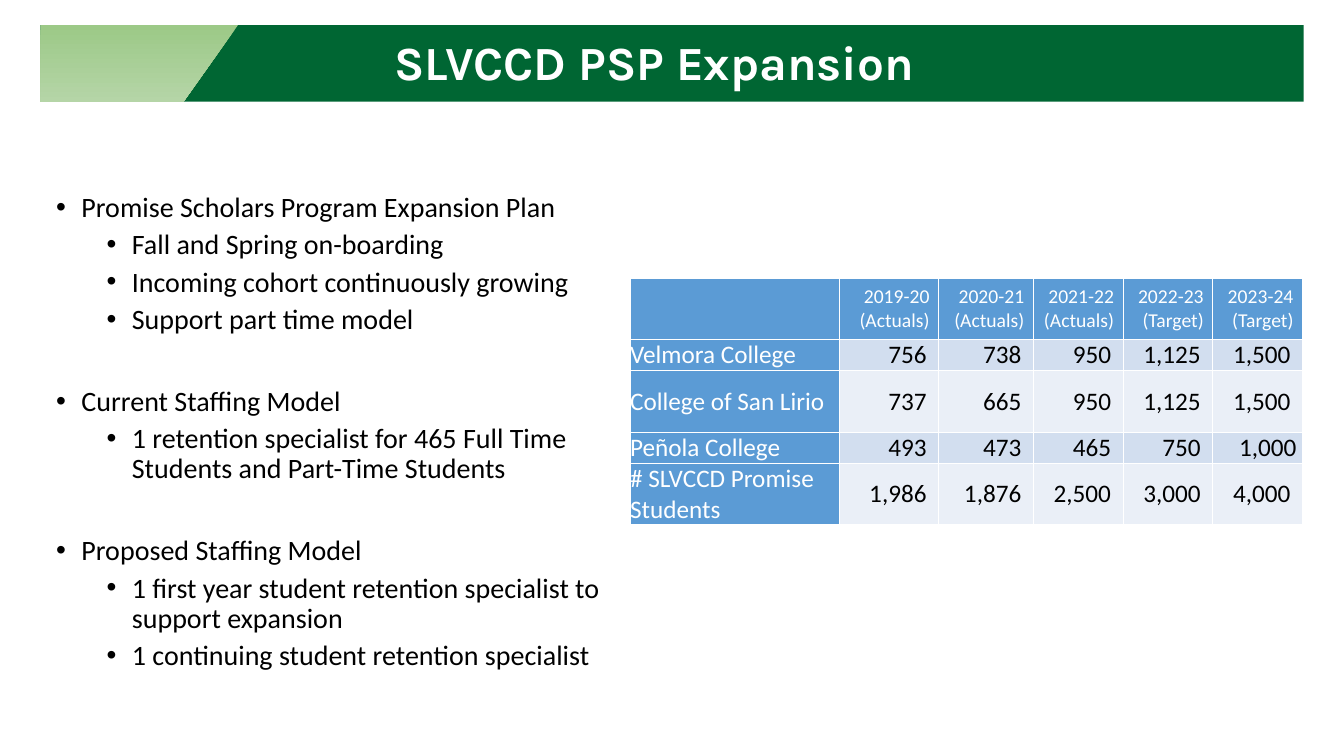
from dataclasses import dataclass

from lxml.etree import SubElement
from pptx import Presentation
from pptx.dml.color import RGBColor
from pptx.enum.shapes import MSO_SHAPE
from pptx.enum.text import MSO_ANCHOR, PP_ALIGN
from pptx.oxml import parse_xml
from pptx.oxml.ns import nsdecls, qn
from pptx.slide import Slide
from pptx.table import _Cell
from pptx.util import Inches, Pt

COLORS = {
    "banner": "006633",
    "accent_top": "9CC987",
    "accent_bottom": "B5D5A7",
    "header": "5B9BD5",
    "band_dark": "D2DEEF",
    "band_light": "EAEFF7",
    "white": "FFFFFF",
    "black": "000000",
}


@dataclass
class Bullet:
    text: str
    level: int = 1
    space_before: float = 5


@dataclass
class CollegeRow:
    name: str
    counts: list[str]
    height: float


SECTION_GAP = 37
BULLETS = [
    Bullet("Promise Scholars Program Expansion Plan", 0, 10),
    Bullet("Fall and Spring on-boarding"),
    Bullet("Incoming cohort continuously growing"),
    Bullet("Support part time model"),
    Bullet("Current Staffing Model", 0, SECTION_GAP),
    Bullet("1 retention specialist for 465 Full Time Students and Part-Time Students"),
    Bullet("Proposed Staffing Model", 0, SECTION_GAP),
    Bullet("1 first year student retention specialist to support expansion"),
    Bullet("1 continuing student retention specialist"),
]

YEARS = [
    "2019-20\n(Actuals)",
    "2020-21\n(Actuals)",
    "2021-22\n(Actuals)",
    "2022-23\n(Target)",
    "2023-24\n(Target)",
]
COLLEGES = [
    CollegeRow("Velmora College", ["756", "738", "950", "1,125", "1,500"], 0.31),
    CollegeRow("College of San Lirio", ["737", "665", "950", "1,125", "1,500"], 0.61),
    CollegeRow("Peñola College", ["493", "473", "465", "750", "1,000"], 0.31),
    CollegeRow("# SLVCCD Promise Students", ["1,986", "1,876", "2,500", "3,000", "4,000"], 0.61),
]
COLUMN_WIDTHS = [2.08, 0.98, 0.94, 0.89, 0.89, 0.89]
HEADER_HEIGHT = 0.61


def color(name: str) -> RGBColor:
    return RGBColor.from_string(COLORS[name])


def add_banner(page: Slide) -> None:
    bar = page.shapes.add_shape(
        MSO_SHAPE.RECTANGLE, Inches(0.4), Inches(0.25), Inches(12.53), Inches(0.76)
    )
    bar.shadow.inherit = False
    bar.fill.solid()
    bar.fill.fore_color.rgb = color("banner")
    bar.line.fill.background()

    # Title
    box = page.shapes.add_textbox(Inches(0.74), Inches(0.36), Inches(11.5), Inches(0.58))
    frame = box.text_frame
    frame.word_wrap = True
    frame.vertical_anchor = MSO_ANCHOR.MIDDLE
    frame.text = "SLVCCD PSP Expansion"
    para = frame.paragraphs[0]
    para.alignment = PP_ALIGN.CENTER
    para.line_spacing = 0.9
    font = para.runs[0].font
    font.name, font.size, font.bold = "Karla", Pt(34), True
    font.color.rgb = color("white")

    # Slanted accent
    builder = page.shapes.build_freeform(Inches(0.4), Inches(0.25))
    corners = [(2.36, 0.25), (1.82, 1.01), (0.4, 1.01)]
    builder.add_line_segments([(Inches(x), Inches(y)) for x, y in corners])
    accent = builder.convert_to_shape()
    accent.shadow.inherit = False
    accent.line.fill.background()
    accent.fill.gradient()
    accent.fill.gradient_angle = 270
    for stop, name in zip(accent.fill.gradient_stops, ["accent_top", "accent_bottom"]):
        stop.color.rgb = color(name)


def add_bullets(page: Slide) -> None:
    box = page.shapes.add_textbox(Inches(0.46), Inches(1.87), Inches(5.7), Inches(5.44))
    frame = box.text_frame
    frame.word_wrap = True
    frame.text = "\n".join(bullet.text for bullet in BULLETS)
    for para, bullet in zip(frame.paragraphs, BULLETS):
        para.level = bullet.level
        para.line_spacing = 0.9
        para.space_before = Pt(bullet.space_before)
        font = para.runs[0].font
        font.name, font.size = "Calibri", Pt(20)
        font.color.rgb = color("black")
        properties = para._p.get_or_add_pPr()
        properties.set("marL", str(Inches(0.25 + 0.5 * bullet.level)))
        properties.set("indent", str(Inches(-0.25)))
        SubElement(properties, qn("a:buFont")).set("typeface", "Arial")
        SubElement(properties, qn("a:buChar")).set("char", "•")


def add_borders(cell: _Cell) -> None:
    properties = cell._tc.get_or_add_tcPr()
    for position, side in enumerate(["lnL", "lnR", "lnT", "lnB"]):
        line = parse_xml(
            f'<a:{side} {nsdecls("a")} w="{Pt(1)}"><a:solidFill>'
            f'<a:srgbClr val="{COLORS["white"]}"/></a:solidFill></a:{side}>'
        )
        properties.insert(position, line)


def style_cell(
    cell: _Cell, text: str, size: float, ink: str, fill: str,
    align: PP_ALIGN, right: float = 0,
) -> None:
    cell.text_frame.text = text
    cell.vertical_anchor = MSO_ANCHOR.MIDDLE
    cell.margin_left = cell.margin_top = cell.margin_bottom = 0
    cell.margin_right = Inches(right)
    cell.fill.solid()
    cell.fill.fore_color.rgb = color(fill)
    for para in cell.text_frame.paragraphs:
        para.alignment = align
        for span in para.runs:
            span.font.name, span.font.size = "Calibri", Pt(size)
            span.font.color.rgb = color(ink)
    add_borders(cell)


def add_enrollment_table(page: Slide) -> None:
    heights = [HEADER_HEIGHT] + [college.height for college in COLLEGES]
    table = page.shapes.add_table(
        len(heights), len(COLUMN_WIDTHS), Inches(6.25), Inches(2.76),
        Inches(sum(COLUMN_WIDTHS)), Inches(sum(heights)),
    ).table
    table.first_row = table.horz_banding = False
    for column, width in zip(table.columns, COLUMN_WIDTHS):
        column.width = Inches(width)
    for row, height in zip(table.rows, heights):
        row.height = Inches(height)

    # Header row
    for index, year in enumerate([""] + YEARS):
        style_cell(table.cell(0, index), year, 14, "white", "header", PP_ALIGN.RIGHT, 0.09)

    # College rows
    for row_index, college in enumerate(COLLEGES, start=1):
        style_cell(
            table.cell(row_index, 0), college.name, 18, "white", "header", PP_ALIGN.LEFT
        )
        band = "band_dark" if row_index % 2 else "band_light"
        for column_index, count in enumerate(college.counts, start=1):
            right = 0.06 if count == "1,000" else 0.12
            style_cell(
                table.cell(row_index, column_index), count, 18, "black", band,
                PP_ALIGN.RIGHT, right,
            )


def main() -> None:
    deck = Presentation()
    deck.slide_width, deck.slide_height = Inches(13.33), Inches(7.5)
    page = deck.slides.add_slide(deck.slide_layouts[6])
    add_banner(page)
    add_enrollment_table(page)
    add_bullets(page)
    deck.save("out.pptx")


if __name__ == "__main__":
    main()
